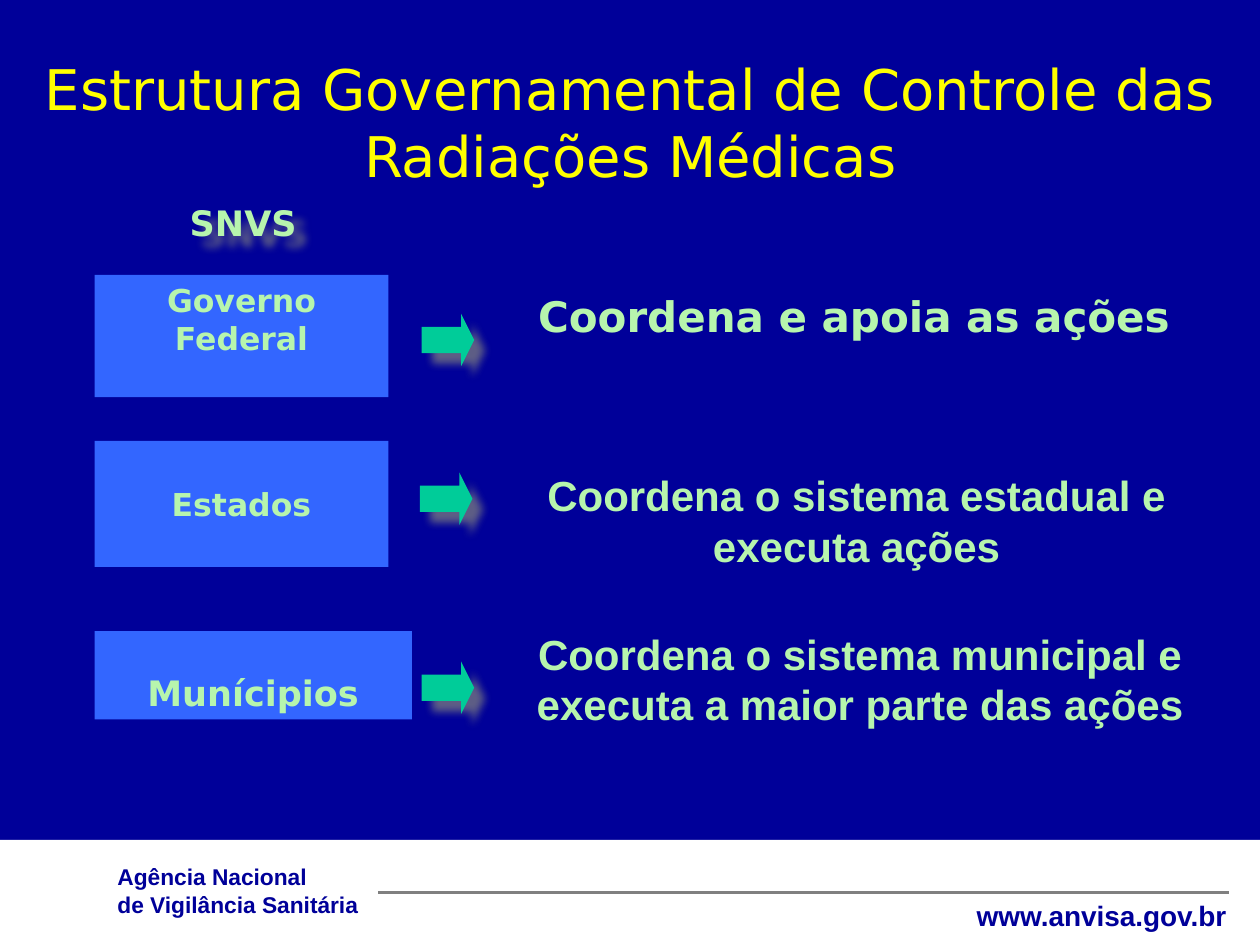
import pptx
import pptx.util
import pptx.dml.color
import pptx.enum.shapes
import pptx.enum.text
import pptx.oxml
import pptx.oxml.ns

Pt = pptx.util.Pt
Shape = pptx.enum.shapes.MSO_SHAPE
Align = pptx.enum.text.PP_ALIGN
Anchor = pptx.enum.text.MSO_ANCHOR

COLOURS = {
    "navy": "000099", "white": "FFFFFF", "grey": "808080", "yellow": "FFFF00",
    "blue": "3366FF", "mint": "B7F5AD", "green": "00CC99",
}
SANS, ARIAL = "DejaVu Sans", "Arial"


def colour(name):
    return pptx.dml.color.RGBColor.from_string(COLOURS[name])


class SlideBuilder:
    """Holds the style and the current slide; all lengths are points."""

    def __init__(self, slide):
        self.slide = slide
        self.shapes = slide.shapes
        fill = slide.background.fill
        fill.solid()
        fill.fore_color.rgb = colour("navy")

    def effects(self, item, content=""):
        namespace = pptx.oxml.ns.nsdecls("a")
        item._element.spPr.append(pptx.oxml.parse_xml(
            f"<a:effectLst {namespace}>{content}</a:effectLst>"))

    def cast_shadow(self, item):
        self.effects(item, (
            f'<a:outerShdw blurRad="{Pt(5)}" dist="{Pt(8.5)}" dir="2700000" algn="ctr"'
            f' rotWithShape="0"><a:srgbClr val="{COLOURS["grey"]}">'
            '<a:alpha val="75000"/></a:srgbClr></a:outerShdw>'))

    def set_text(self, item, lines, size, font=SANS, ink="mint", bold=True,
                 align=Align.CENTER, anchor=Anchor.TOP):
        frame = item.text_frame
        frame.word_wrap = True
        frame.vertical_anchor = anchor
        frame.text = "\n".join(lines)
        style = {"name": font, "size": Pt(size), "bold": bold}
        for para in frame.paragraphs:
            para.alignment = align
            for span in para.runs:
                for key, value in style.items():
                    setattr(span.font, key, value)
                span.font.color.rgb = colour(ink)

    def text(self, place, lines, size, **style):
        box = self.shapes.add_textbox(*map(Pt, place))
        self.set_text(box, lines, size, **style)
        return box

    def block(self, place, fill, kind=Shape.RECTANGLE):
        item = self.shapes.add_shape(kind, *map(Pt, place))
        item.fill.solid()
        item.fill.fore_color.rgb = colour(fill)
        item.line.fill.background()
        return item

    def rectangle(self, place, fill):
        item = self.block(place, fill)
        item.shadow.inherit = False
        return item

    def arrow(self, left, top, side=30):
        item = self.block((left, top, side, side), "green", Shape.RIGHT_ARROW)
        item.adjustments[0] = 0.5
        item.adjustments[1] = 0.25
        self.cast_shadow(item)

    def rule(self, left, right, top, width):
        line = self.shapes.add_connector(
            pptx.enum.shapes.MSO_CONNECTOR.STRAIGHT,
            Pt(left), Pt(top), Pt(right), Pt(top))
        line.line.color.rgb = colour("grey")
        line.line.width = Pt(width)
        self.effects(line)


def main():
    deck = pptx.Presentation()
    deck.slide_width, deck.slide_height = Pt(720), Pt(540)
    page = SlideBuilder(deck.slides.add_slide(deck.slide_layouts[6]))

    # Footer band
    page.rectangle((0, 480, 720, 60), "white")
    footer = {"font": ARIAL, "ink": "navy"}
    page.text((60, 489.6, 156, 38), ["Agência Nacional", "de Vigilância Sanitária"],
              13, align=Align.LEFT, **footer)
    page.rule(216, 702, 510, 2.25)
    page.text((528, 510, 180, 26.6), ["www.anvisa.gov.br"],
              16, align=Align.RIGHT, **footer)

    # Title and column heading
    page.text((14.4, 27.5, 692, 96.5),
              ["Estrutura Governamental de Controle das Radiações Médicas"],
              32, ink="yellow", bold=False)
    heading = page.text((82, 111.6, 114, 31), ["SNVS"], 20)
    page.cast_shadow(heading)

    # Levels of government: box, arrow, role
    levels = [
        ("Governo Federal", (54, 157, 168, 70), 18, Anchor.TOP, (241, 179.3),
         "Coordena e apoia as ações", (281, 162, 414, 37), SANS),
        ("Estados", (54, 252, 168, 72), 18, Anchor.MIDDLE, (240, 270),
         "Coordena o sistema estadual e executa ações", (282, 264.5, 415, 65.5), ARIAL),
        ("Munícipios", (54, 360.7, 181.4, 50.4), 20, Anchor.BOTTOM, (241, 378),
         "Coordena o sistema municipal e executa a maior parte das ações",
         (286.5, 355, 410, 65.5), ARIAL),
    ]
    for name, place, size, anchor, arrow_at, role, role_place, font in levels:
        box = page.rectangle(place, "blue")
        page.set_text(box, [name], size, anchor=anchor)
        page.arrow(*arrow_at)
        page.text(role_place, [role], 24, font=font, anchor=Anchor.MIDDLE)

    deck.save("out.pptx")


if __name__ == "__main__":
    main()
